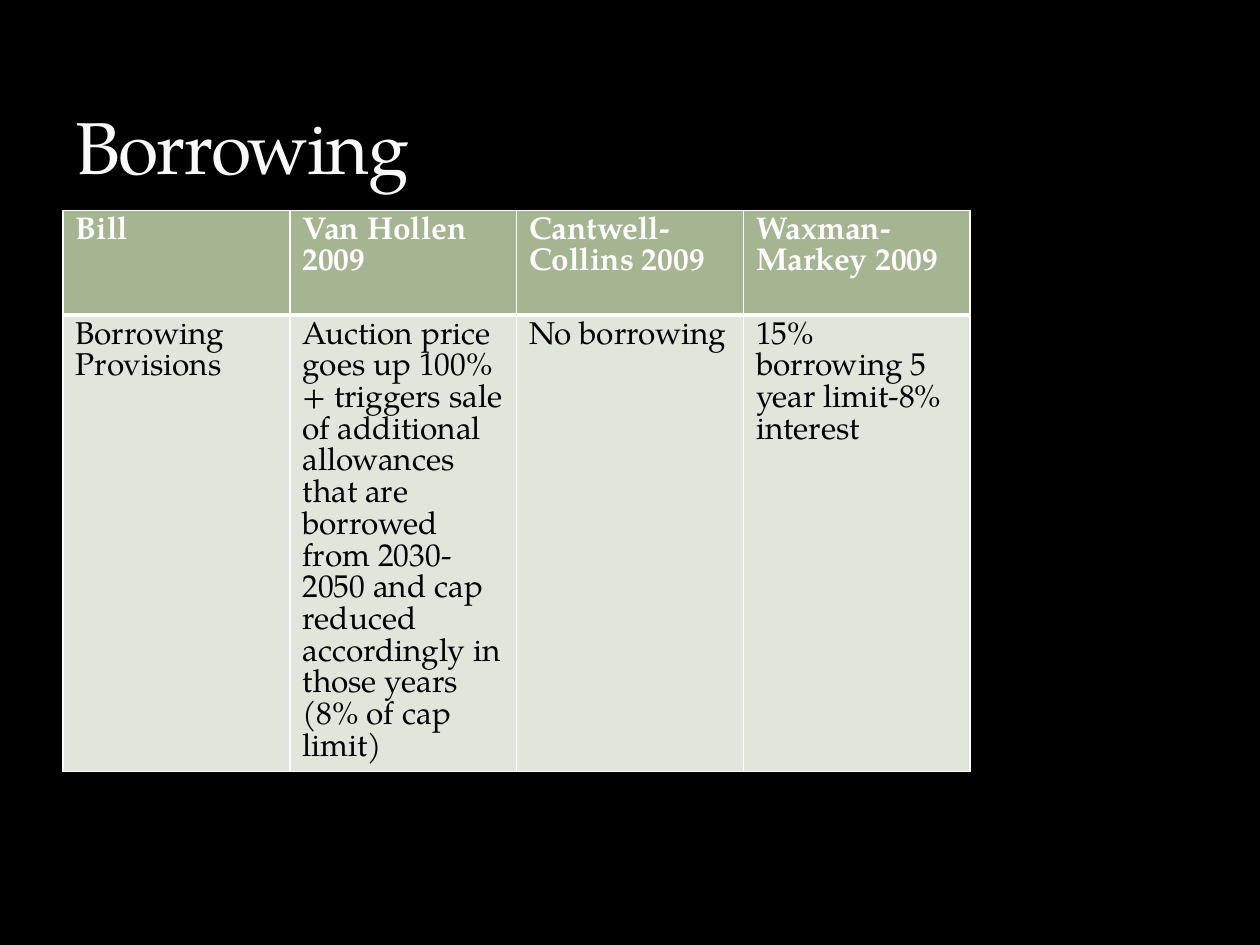
import pptx
import pptx.dml.color
import pptx.enum.text
import pptx.oxml
import pptx.oxml.ns
import pptx.util
from pptx.util import Inches

FONT = "TeX Gyre Pagella"
HUES = {
    "back": "000000",
    "title": "F9F9F9",
    "head": "A5B592",
    "body": "E1E5DC",
    "white": "FFFFFF",
    "black": "000000",
}
ROWS = [
    ["Bill", "Van Hollen 2009", "Cantwell- Collins 2009", "Waxman-Markey 2009"],
    [
        "Borrowing Provisions",
        "Auction price goes up 100%+ triggers sale of additional allowances "
        "that are borrowed from 2030-2050 and cap reduced accordingly in "
        "those years (8% of cap limit)",
        "No borrowing",
        "15% borrowing 5 year limit-8% interest",
    ],
]
HEIGHTS = [0.83, 3.62]
COL_WIDTH = 1.8


def paint(fill, hue):
    fill.solid()
    fill.fore_color.rgb = pptx.dml.color.RGBColor.from_string(HUES[hue])


def add_run(frame, text, size, hue, bold=False):
    run = frame.paragraphs[0].add_run()
    run.text = text
    run.font.name = FONT
    run.font.size = pptx.util.Pt(size)
    run.font.bold = bold
    paint(run.font.fill, hue)
    return run


def add_title(slide, text):
    box = slide.shapes.add_textbox(Inches(0.5), Inches(0.17), Inches(9), Inches(1.33))
    frame = box.text_frame
    frame.word_wrap = True
    frame.vertical_anchor = pptx.enum.text.MSO_ANCHOR.BOTTOM
    frame.margin_bottom = 0
    run = add_run(frame, text, 42, "title")
    run.font._element.set("spc", "-100")


def set_edges(cell, widths):
    """Draw white borders, given widths in points by side (L, R, T, B)."""
    props = cell._tc.get_or_add_tcPr()
    for spot, (side, width) in enumerate(widths.items()):
        line = pptx.oxml.parse_xml(
            f'<a:ln{side} {pptx.oxml.ns.nsdecls("a")} w="{pptx.util.Pt(width)}">'
            f'<a:solidFill><a:srgbClr val="{HUES["white"]}"/></a:solidFill>'
            f"</a:ln{side}>"
        )
        props.insert(spot, line)


def add_grid(slide):
    count = len(ROWS[0])
    table = slide.shapes.add_table(
        len(ROWS), count, Inches(0.5), Inches(1.67),
        Inches(COL_WIDTH * count), Inches(sum(HEIGHTS)),
    ).table
    for col in table.columns:
        col.width = Inches(COL_WIDTH)
    for r, texts in enumerate(ROWS):
        head = r == 0
        table.rows[r].height = Inches(HEIGHTS[r])
        for c, text in enumerate(texts):
            cell = table.cell(r, c)
            paint(cell.fill, "head" if head else "body")
            add_run(cell.text_frame, text, 18, "white" if head else "black", head)
            top, base = (1, 3) if head else (3, 1)
            set_edges(cell, {"L": 1, "R": 1, "T": top, "B": base})


def main():
    deck = pptx.Presentation()
    deck.slide_width, deck.slide_height = Inches(10), Inches(7.5)
    slide = deck.slides.add_slide(deck.slide_layouts[6])
    paint(slide.background.fill, "back")
    add_grid(slide)
    add_title(slide, "Borrowing")
    deck.save("out.pptx")


if __name__ == "__main__":
    main()
